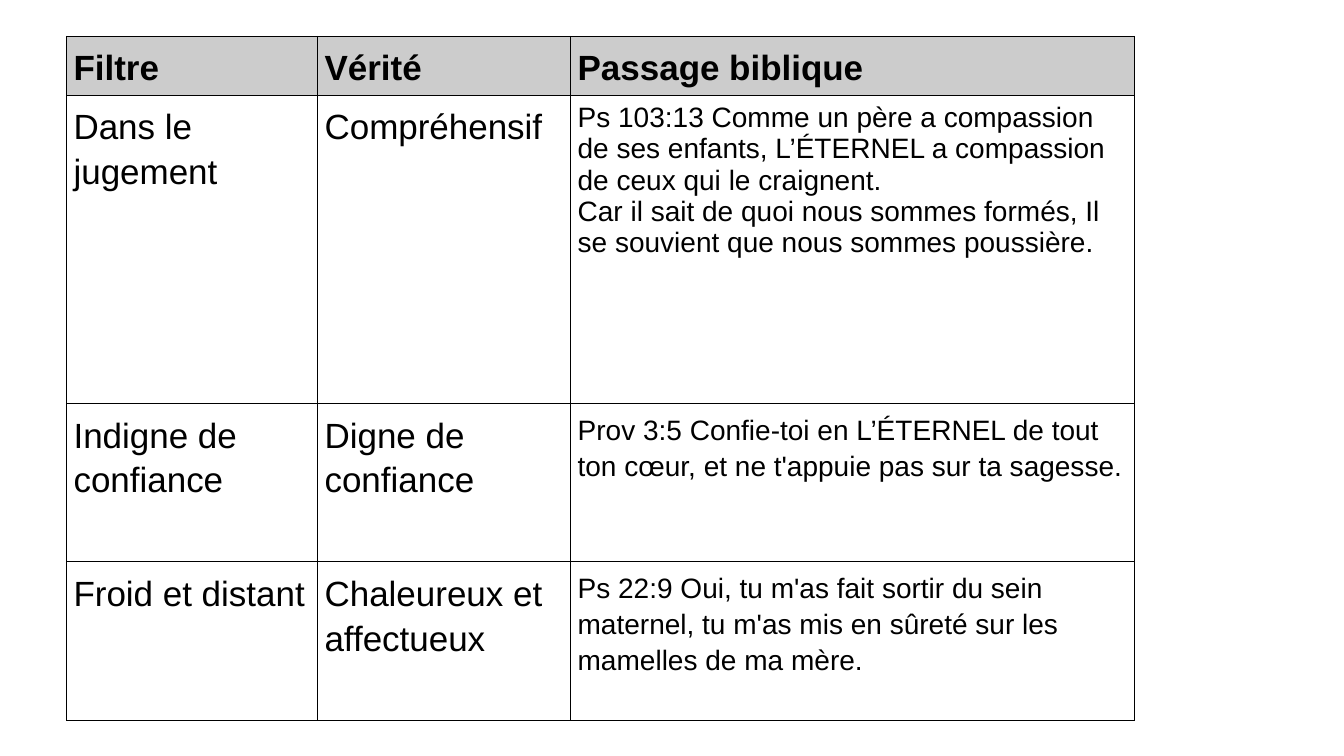
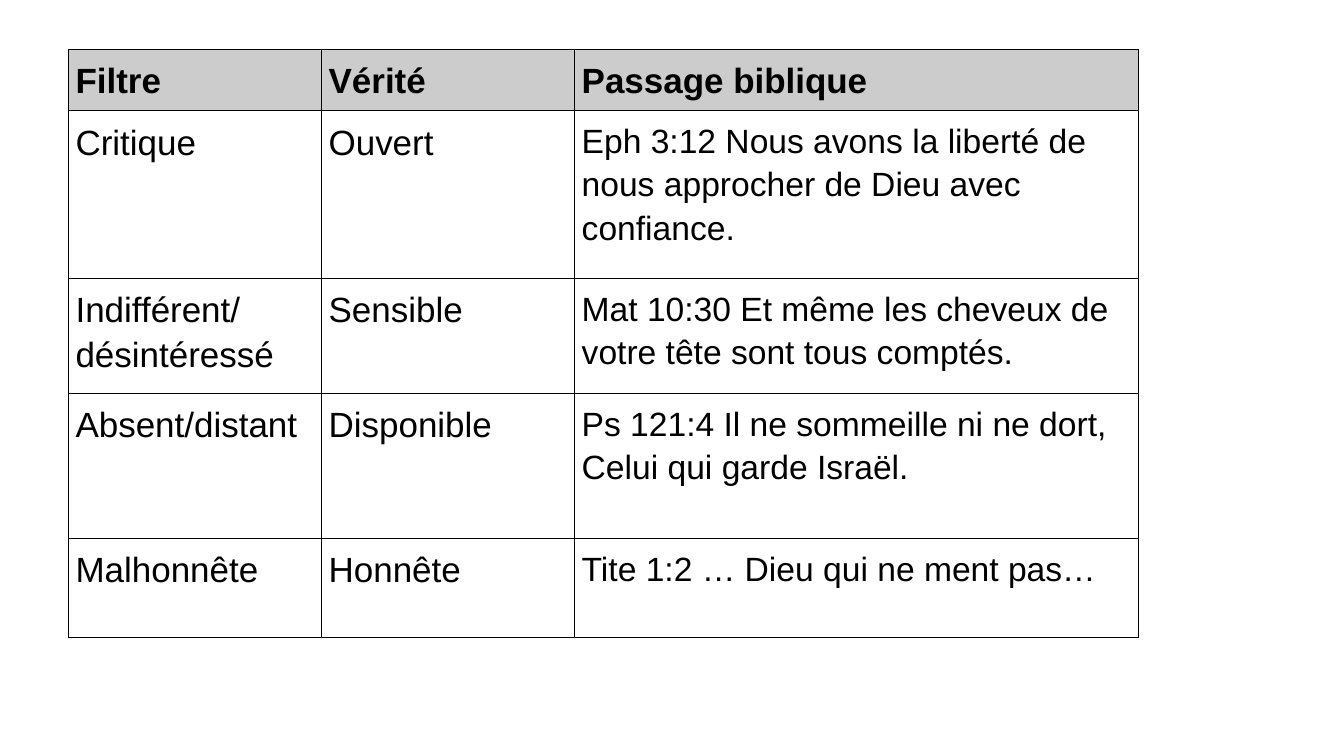
from lxml import etree
from pptx import Presentation
from pptx.dml.color import RGBColor
from pptx.oxml.ns import qn
from pptx.util import Inches, Pt

COLORS = {"text": "000000", "border": "000000", "header": "CCCCCC"}
FONT = "Arial"
LABEL_SIZE = 25
LINE_SPACING = 1.15
BORDER_WIDTH = Pt(0.75)
CELL_MARGIN = Inches(0.07)
HEADINGS = ("Filtre", "Vérité", "Passage biblique")

# Each row: height, filter, truth, passage, line spacing of the passage
SLIDES = [
    {
        "left": 0.66, "top": 0.36, "columns": (2.49, 2.51, 5.59),
        "header_height": 0.58, "passage_size": 20,
        "rows": [
            (3.06, "Dans le jugement", "Compréhensif",
             "Ps 103:13 Comme un père a compassion de ses enfants, "
             "L’ÉTERNEL a compassion de ceux qui le craignent.\n"
             "Car il sait de quoi nous sommes formés, "
             "Il se souvient que nous sommes poussière.", 1.0),
            (1.57, "Indigne de confiance", "Digne de confiance",
             "Prov 3:5 Confie-toi en L’ÉTERNEL de tout ton cœur, "
             "et ne t'appuie pas sur ta sagesse.", LINE_SPACING),
            (1.57, "Froid et distant", "Chaleureux et affectueux",
             "Ps 22:9 Oui, tu m'as fait sortir du sein maternel, "
             "tu m'as mis en sûreté sur les mamelles de ma mère.", LINE_SPACING),
        ],
    },
    {
        "left": 0.68, "top": 0.49, "columns": (2.51, 2.51, 5.59),
        "header_height": 0.61, "passage_size": 24,
        "rows": [
            (1.66, "Critique", "Ouvert",
             "Eph 3:12 Nous avons la liberté de nous approcher de Dieu "
             "avec confiance.", LINE_SPACING),
            (1.14, "Indifférent/\ndésintéressé", "Sensible",
             "Mat 10:30 Et même les cheveux de votre tête sont tous comptés.",
             LINE_SPACING),
            (1.44, "Absent/distant", "Disponible",
             "Ps 121:4 Il ne sommeille ni ne dort, Celui qui garde Israël.",
             LINE_SPACING),
            (0.98, "Malhonnête", "Honnête",
             "Tite 1:2 … Dieu qui ne ment pas…", LINE_SPACING),
        ],
    },
]


def add_borders(cell):
    properties = cell._tc.get_or_add_tcPr()
    for side in ("a:lnL", "a:lnR", "a:lnT", "a:lnB"):
        line = etree.SubElement(properties, qn(side), w=str(BORDER_WIDTH))
        fill = etree.SubElement(line, qn("a:solidFill"))
        etree.SubElement(fill, qn("a:srgbClr"), val=COLORS["border"])


def fill_cell(cell, text, size, spacing, is_header):
    add_borders(cell)
    if is_header:
        cell.fill.solid()
        cell.fill.fore_color.rgb = RGBColor.from_string(COLORS["header"])
    else:
        cell.fill.background()
    for side in ("left", "right", "top", "bottom"):
        setattr(cell, f"margin_{side}", CELL_MARGIN)
    cell.text = text
    for paragraph in cell.text_frame.paragraphs:
        paragraph.line_spacing = spacing
        for run in paragraph.runs:
            font_format = {"name": FONT, "size": Pt(size), "bold": is_header}
            for attribute, value in font_format.items():
                setattr(run.font, attribute, value)
            run.font.color.rgb = RGBColor.from_string(COLORS["text"])


prs = Presentation()
prs.slide_width = Inches(13.33)
prs.slide_height = Inches(7.5)
blank = prs.slide_layouts[6]

for content in SLIDES:
    slide = prs.slides.add_slide(blank)
    rows = [(content["header_height"], *HEADINGS, LINE_SPACING), *content["rows"]]
    columns = content["columns"]
    table = slide.shapes.add_table(
        len(rows), len(columns),
        Inches(content["left"]), Inches(content["top"]),
        Inches(sum(columns)), Inches(sum(row[0] for row in rows)),
    ).table
    table.first_row = False
    table.horz_banding = False
    for column, width in zip(table.columns, columns):
        column.width = Inches(width)

    for row_index, (height, *texts, passage_spacing) in enumerate(rows):
        table.rows[row_index].height = Inches(height)
        is_header = row_index == 0
        for column_index, text in enumerate(texts):
            is_passage = column_index == 2 and not is_header
            fill_cell(
                table.cell(row_index, column_index), text,
                content["passage_size"] if is_passage else LABEL_SIZE,
                passage_spacing if is_passage else LINE_SPACING,
                is_header,
            )

prs.save("out.pptx")
